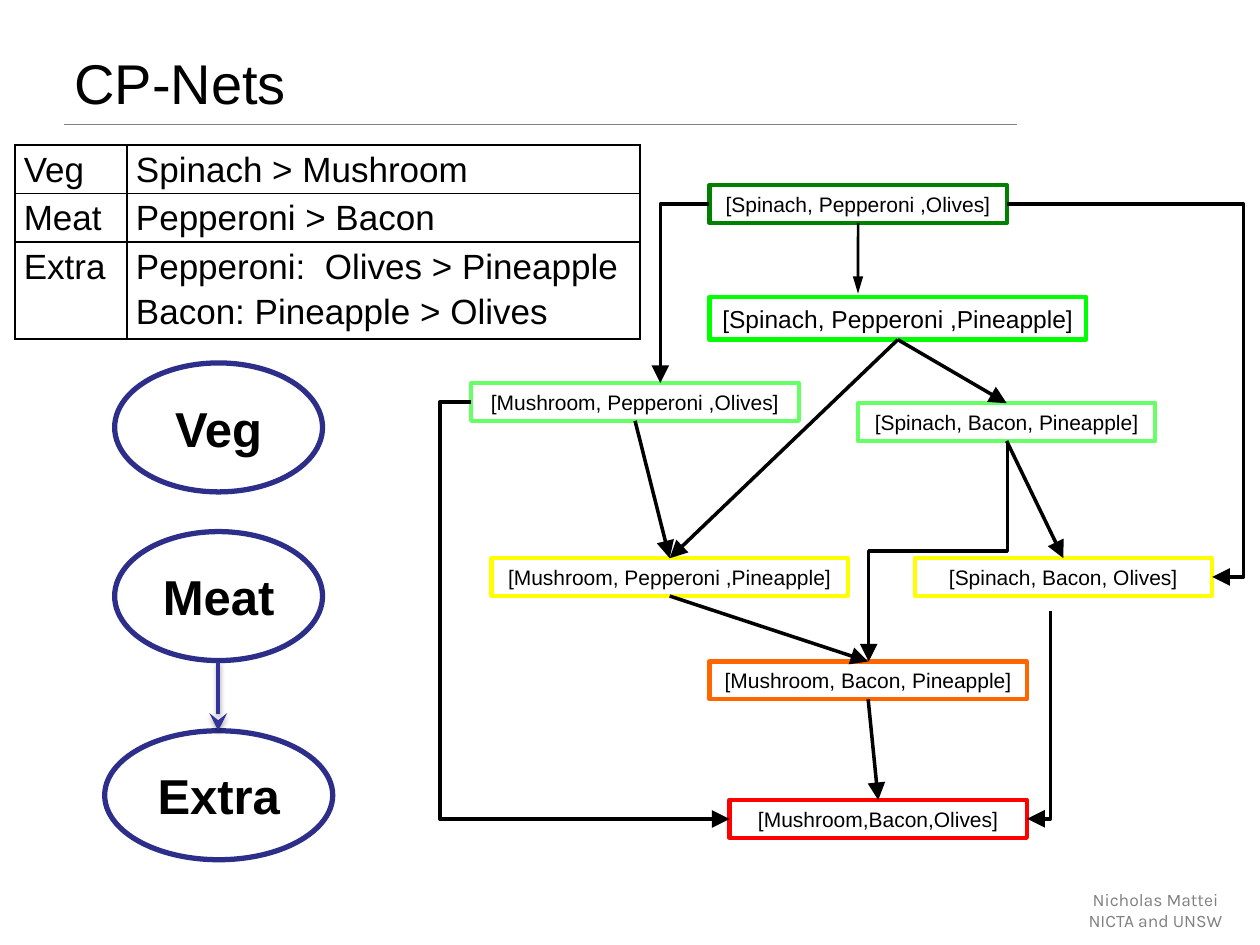
import lxml.etree
import pptx
import pptx.dml.color
import pptx.enum.shapes
import pptx.enum.text
import pptx.oxml.ns
import pptx.util

Pt = pptx.util.Pt
qn = pptx.oxml.ns.qn
SubElement = lxml.etree.SubElement
ALIGN = pptx.enum.text.PP_ALIGN
ANCHOR = pptx.enum.text.MSO_ANCHOR
SHAPE = pptx.enum.shapes.MSO_SHAPE
LINK = pptx.enum.shapes.MSO_CONNECTOR

COLORS = {
    "black": "000000", "white": "FFFFFF", "gray": "808080", "navy": "2D2D8A",
    "indigo": "333399", "dark green": "008000", "green": "00FF00",
    "light green": "66FF66", "yellow": "FFFF00", "orange": "FF6600", "red": "FF0000",
}

# Outcome: label, left, top, width, height, text size, outline colour
OUTCOMES = {
    "SPO": ("[Spinach, Pepperoni ,Olives]", 405.4, 105.8, 169.9, 21.6, 12, "dark green"),
    "SPP": ("[Spinach, Pepperoni ,Pineapple]", 405.4, 169.9, 215.3, 24.2, 14, "green"),
    "MPO": ("[Mushroom, Pepperoni ,Olives]", 269.3, 218.9, 187.2, 21.6, 12, "light green"),
    "SBP": ("[Spinach, Bacon, Pineapple]", 490.3, 230.4, 169.9, 21.6, 12, "light green"),
    "MPP": ("[Mushroom, Pepperoni ,Pineapple]", 280.8, 319, 203.8, 21.6, 12, "yellow"),
    "SBO": ("[Spinach, Bacon, Olives]", 522.7, 319, 169.9, 21.6, 12, "yellow"),
    "MBP": ("[Mushroom, Bacon, Pineapple]", 405.4, 378, 181.4, 21.6, 12, "orange"),
    "MBO": ("[Mushroom,Bacon,Olives]", 416.9, 457.2, 169.9, 21.6, 12, "red"),
}
# Straight flips run from bottom side to top side
FLIPS = [("SPP", "SBP"), ("SPP", "MPP"), ("MPO", "MPP"),
         ("MPP", "MBP"), ("MBP", "MBO"), ("SBP", "SBO")]

PREFERENCES = [
    ("Veg", "Spinach > Mushroom"),
    ("Meat", "Pepperoni > Bacon"),
    ("Extra", "Pepperoni:  Olives > Pineapple\nBacon: Pineapple > Olives"),
]


def rgb(name):
    return pptx.dml.color.RGBColor.from_string(COLORS[name])


def write(tf, text, size, font="Arial", color="black", bold=False,
          align=ALIGN.LEFT, anchor=ANCHOR.TOP, spacing=None, wrap=True):
    tf.word_wrap = wrap
    tf.vertical_anchor = anchor
    for i, line in enumerate(text.split("\n")):
        p = tf.paragraphs[0] if i == 0 else tf.add_paragraph()
        p.alignment = align
        if spacing:
            p.line_spacing = spacing
        r = p.add_run()
        r.text = line
        r.font.name, r.font.size, r.font.bold = font, Pt(size), bold
        r.font.color.rgb = rgb(color)


def add_node(slide, kind, box, text, size, outline, width, fill=None, bold=False):
    sp = slide.shapes.add_shape(kind, *map(Pt, box))
    sp.shadow.inherit = False
    if fill:
        sp.fill.solid()
        sp.fill.fore_color.rgb = rgb(fill)
    else:
        sp.fill.background()
    sp.line.color.rgb = rgb(outline)
    sp.line.width = Pt(width)
    write(sp.text_frame, text, size, bold=bold, align=ALIGN.CENTER,
          anchor=ANCHOR.MIDDLE, wrap=False)
    return sp


def add_line(slide, ends, color="black", width=2, head="triangle", head_width="lg",
             kind=LINK.STRAIGHT):
    cxn = slide.shapes.add_connector(kind, *map(Pt, ends))
    cxn.line.color.rgb = rgb(color)
    cxn.line.width = Pt(width)
    if head:
        ln = cxn._element.spPr.find(qn("a:ln"))
        SubElement(ln, qn("a:tailEnd"), type=head, w=head_width, len="lg")
    SubElement(cxn._element.spPr, qn("a:effectLst"))
    return cxn


def add_elbow(slide, left, top, width, height, rot=0, flip_v=False, adjust=None):
    """One bend without adjust, two bends with the middle leg at that share."""
    cxn = add_line(slide, (left, top, left + width, top + height), kind=LINK.ELBOW)
    spPr = cxn._element.spPr
    xfrm, geom = spPr.find(qn("a:xfrm")), spPr.find(qn("a:prstGeom"))
    if rot:
        xfrm.set("rot", str(rot * 60000))
    if flip_v:
        xfrm.set("flipV", "1")
    if adjust is None:
        geom.set("prst", "bentConnector2")
    else:
        SubElement(geom.find(qn("a:avLst")), qn("a:gd"), name="adj1",
                   fmla=f"val {round(adjust * 100000)}")


def add_shadow(cxn):
    effects = cxn._element.spPr.find(qn("a:effectLst"))
    shadow = SubElement(effects, qn("a:outerShdw"), blurRad=str(Pt(3.1)),
                        dist=str(Pt(1.6)), dir="5400000", rotWithShape="0")
    clr = SubElement(shadow, qn("a:srgbClr"), val=COLORS["black"])
    SubElement(clr, qn("a:alpha"), val="38000")


def add_borders(cell):
    tcPr = cell._tc.get_or_add_tcPr()
    for side in ("lnL", "lnR", "lnT", "lnB"):
        ln = SubElement(tcPr, qn(f"a:{side}"), w=str(Pt(1)))
        fill = SubElement(ln, qn("a:solidFill"))
        SubElement(fill, qn("a:srgbClr"), val=COLORS["black"])


def add_preferences(slide):
    heights = (27.7, 27.7, 55.6)
    frame = slide.shapes.add_table(3, 2, Pt(8.6), Pt(82.8), Pt(357.1), Pt(sum(heights)))
    table = frame.table
    table.first_row = table.horz_banding = False
    for column, width in zip(table.columns, (64.1, 293)):
        column.width = Pt(width)
    for row, height, texts in zip(table.rows, heights, PREFERENCES):
        row.height = Pt(height)
        for cell, text in zip(row.cells, texts):
            cell.margin_left = cell.margin_right = Pt(5)
            cell.margin_top = cell.margin_bottom = 0
            add_borders(cell)
            cell.fill.background()
            write(cell.text_frame, text, 20, spacing=1.15)


def add_dependencies(slide):
    for text, left, top, width in (("Veg", 65.5, 207.4, 118.8),
                                   ("Meat", 65.5, 303.8, 118.8),
                                   ("Extra", 59.8, 417.6, 130.3)):
        add_node(slide, SHAPE.OVAL, (left, top, width, 73.7), text, 28,
                 "navy", 3, fill="white", bold=True)
    add_shadow(add_line(slide, (124.7, 378, 124.7, 417.6), "indigo", head="stealth"))


def add_outcome_graph(slide):
    nodes = {}
    for key, (text, left, top, width, height, size, color) in OUTCOMES.items():
        nodes[key] = add_node(slide, SHAPE.RECTANGLE, (left, top, width, height),
                              text, size, color, 2.5)

    # Straight flips
    first = add_line(slide, (490.3, 127.4, 490.3, 167.8), width=1.5, head_width="med")
    first.begin_connect(nodes["SPO"], 2)
    for start, end in FLIPS:
        cxn = add_line(slide, (0, 0, 0, 0))
        cxn.begin_connect(nodes[start], 2)
        cxn.end_connect(nodes[end], 0)

    # Flips routed around other outcomes
    add_elbow(slide, 377.3, 116.6, 28.1, 102.2, rot=180, flip_v=True)
    add_elbow(slide, 575.3, 116.6, 117.4, 213.1, adjust=1.153)
    add_elbow(slide, 534.2, 401.8, 118.8, 13.3, rot=90)
    add_elbow(slide, 269.3, 229.7, 147.6, 238.3, adjust=-0.122)
    add_elbow(slide, 473, 275.4, 126, 79.2, rot=90, adjust=0.5)


def main():
    prs = pptx.Presentation()
    prs.slide_width, prs.slide_height = Pt(720), Pt(540)
    slide = prs.slides.add_slide(prs.slide_layouts[5])

    # Title and rule
    title = slide.shapes.title
    title.left, title.top, title.width, title.height = map(Pt, (35.3, 20.9, 648, 56.9))
    write(title.text_frame, "CP-Nets", 32, anchor=ANCHOR.MIDDLE, spacing=0.9)
    add_line(slide, (36.7, 71.3, 581, 71.3), "gray", 0.75, head=None)

    # Credit
    credit = slide.shapes.add_textbox(*map(Pt, (597.6, 504.7, 125.3, 37.4)))
    write(credit.text_frame, "Nicholas Mattei\nNICTA and UNSW", 10, font="Karla",
          color="gray", align=ALIGN.CENTER)

    add_outcome_graph(slide)
    add_dependencies(slide)
    add_preferences(slide)
    prs.save("out.pptx")


if __name__ == "__main__":
    main()
